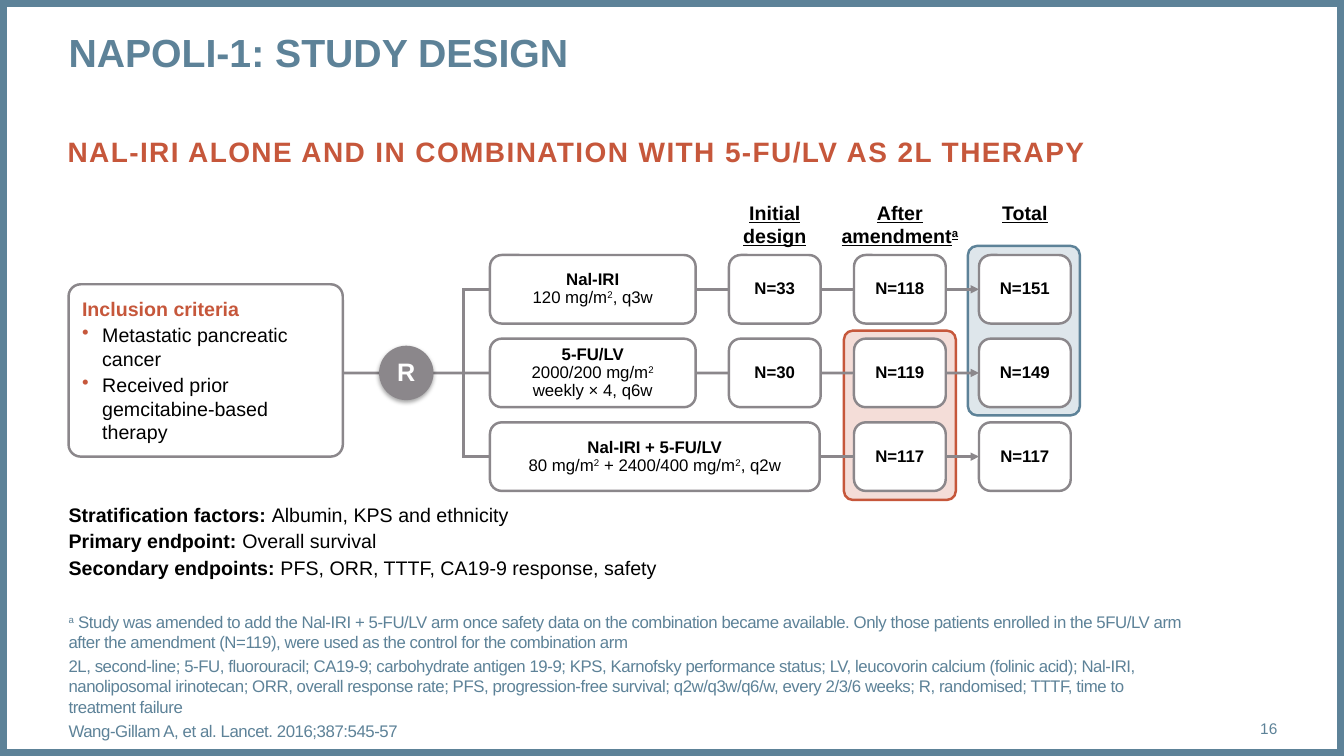
from dataclasses import dataclass

import pptx
import pptx.dml.color
import pptx.enum.shapes
import pptx.enum.text
import pptx.oxml
import pptx.oxml.ns
import pptx.util
from lxml import etree

Inches = pptx.util.Inches
Pt = pptx.util.Pt
qn = pptx.oxml.ns.qn
SHAPE = pptx.enum.shapes.MSO_SHAPE
ALIGN = pptx.enum.text.PP_ALIGN
ANCHOR = pptx.enum.text.MSO_ANCHOR


@dataclass(frozen=True)
class Theme:
    font: str = "Arial"
    slate: str = "5D8298"
    slate_tint: str = "DEE6EB"
    rust: str = "C6573B"
    rust_tint: str = "F4DDD8"
    grey: str = "8B878B"
    black: str = "000000"
    white: str = "FFFFFF"
    title: int = 28
    subtitle: int = 20
    badge: int = 18
    body: int = 14
    small: int = 12
    number: int = 11
    outline: float = 1.75
    connector: int = 2


THEME = Theme()

# Span styles: b bold, u underlined, s superscript
ROW_TOP, ROW_STEP, BOX_HEIGHT = 2.53, 0.83, 0.68
COUNT_LEFT, COUNT_STEP, COUNT_WIDTH = 7.23, 1.24, 0.91
ARM_LEFT, BRANCH_X = 4.86, 4.6
BOX_MARGINS = (0.04, 0.05, 0.04, 0.05)

HEADERS = [
    [("Initial\ndesign", "bu")],
    [("After\namendment", "bu"), ("a", "bus")],
    [("Total", "bu")],
]
# Each arm: spans, box width, line start, counts from the last columns
ARMS = [
    ([("Nal-IRI\n", "b"), ("120 mg/m", ""), ("2", "s"), (", q3w", "")],
     2.04, BRANCH_X, ["N=33", "N=118", "N=151"]),
    ([("5-FU/LV\n", "b"), ("2000/200 mg/m", ""), ("2\n", "s"), ("weekly × 4, q6w", "")],
     2.04, 2.95, ["N=30", "N=119", "N=149"]),
    ([("Nal-IRI + 5-FU/LV\n", "b"), ("80 mg/m", ""), ("2", "s"),
      (" + 2400/400 mg/m", ""), ("2", "s"), (", q2w", "")],
     3.27, BRANCH_X, ["N=117", "N=117"]),
]
ENDPOINTS = [
    [("Stratification factors: ", "b"), ("Albumin, KPS and ethnicity", "")],
    [("Primary endpoint: ", "b"), ("Overall survival", "")],
    [("Secondary endpoints: ", "b"), ("PFS, ORR, TTTF, CA19-9 response, safety", "")],
]
FOOTNOTES = [
    [("a", "s"), (" Study was amended to add the Nal-IRI + 5-FU/LV arm once safety data on the "
                  "combination became available. Only those patients enrolled in the 5FU/LV arm "
                  "after the amendment (N=119), were used as the control for the combination arm", "")],
    [("2L, second-line; 5-FU, fluorouracil; CA19-9; carbohydrate antigen 19-9; KPS, Karnofsky "
      "performance status; LV, leucovorin calcium (folinic acid); Nal‑IRI, nanoliposomal "
      "irinotecan; ORR, overall response rate; PFS, progression-free survival; q2w/q3w/q6/w, "
      "every 2/3/6 weeks; R, randomised; TTTF, time to treatment failure", "")],
    [("Wang-Gillam A, et al. Lancet. 2016;387:545-57", "")],
]


def rgb(value):
    return pptx.dml.color.RGBColor.from_string(value)


def apply(target, values):
    for name, value in values.items():
        setattr(target, name, value)


def add_span(para, text, style, size, color, spacing):
    for index, line in enumerate(text.split("\n")):
        if index:
            para.add_line_break()
            etree.SubElement(para._p[-1], qn("a:rPr"), sz=str(size * 100))
        if not line:
            continue
        span = para.add_run()
        span.text = line
        apply(span.font, {"name": THEME.font, "size": Pt(size), "bold": "b" in style,
                          "underline": "u" in style})
        span.font.color.rgb = rgb(color)
        properties = span._r.get_or_add_rPr()
        if "s" in style:
            properties.set("baseline", "30000")
        if spacing:
            properties.set("spc", str(round(spacing * 100)))


def write(shape, paras, size, color, align=ALIGN.LEFT, anchor=ANCHOR.TOP,
          margins=(0, 0, 0, 0), before=0, after=0, line=1.0, spacing=0):
    """Fill a shape with paragraphs, each a list of (text, style) spans."""
    frame = shape.text_frame
    apply(frame, {"word_wrap": True, "auto_size": pptx.enum.text.MSO_AUTO_SIZE.NONE,
                  "vertical_anchor": anchor})
    sides = ("margin_left", "margin_top", "margin_right", "margin_bottom")
    apply(frame, {side: Inches(value) for side, value in zip(sides, margins)})
    for index, spans in enumerate(paras):
        para = frame.add_paragraph() if index else frame.paragraphs[0]
        apply(para, {"alignment": align, "line_spacing": line, "space_after": Pt(after),
                     "space_before": Pt(before if index else 0)})
        for text, style in spans:
            add_span(para, text, style, size, color, spacing)
    return frame


def set_bullet(para, indent, color=None):
    """Hang a coloured bullet, or clear the inherited one if no colour is given."""
    properties = para._p.get_or_add_pPr()
    properties.set("marL", str(Inches(indent)))
    properties.set("indent", str(-Inches(indent)))
    if color:
        holder = etree.SubElement(properties, qn("a:buClr"))
        etree.SubElement(holder, qn("a:srgbClr"), val=color)
        etree.SubElement(properties, qn("a:buChar"), char="•")
    else:
        etree.SubElement(properties, qn("a:buNone"))


def place(shape, left, top, width, height):
    apply(shape, {"left": Inches(left), "top": Inches(top),
                  "width": Inches(width), "height": Inches(height)})


def add_panel(page, kind, area, fill=None, line=None, weight=THEME.outline, corner=None):
    shape = page.shapes.add_shape(kind, *map(Inches, area))
    shape.shadow.inherit = False
    if fill:
        shape.fill.solid()
        shape.fill.fore_color.rgb = rgb(fill)
    else:
        shape.fill.background()
    if line:
        shape.line.color.rgb = rgb(line)
        shape.line.width = Pt(weight)
    else:
        shape.line.fill.background()
    if corner is not None:
        shape.adjustments[0] = corner
    return shape


def add_box(page, left, top, width, spans):
    box = add_panel(page, SHAPE.ROUNDED_RECTANGLE, (left, top, width, BOX_HEIGHT),
                    THEME.white, THEME.grey, corner=0.17)
    write(box, [spans], THEME.small, THEME.black, ALIGN.CENTER, ANCHOR.MIDDLE,
          BOX_MARGINS, line=0.9)
    return box


def add_line(page, start, end, target=None):
    """Draw a line; with a target box it becomes an arrow joined to its left side."""
    line = page.shapes.add_connector(pptx.enum.shapes.MSO_CONNECTOR.STRAIGHT,
                                     *map(Inches, start + end))
    line.line.color.rgb = rgb(THEME.grey)
    line.line.width = Pt(THEME.connector)
    if target is not None:
        line.end_connect(target, 1)
        etree.SubElement(line.line._get_or_add_ln(), qn("a:tailEnd"), type="triangle")
    etree.SubElement(line._element.spPr, qn("a:effectLst"))


def add_text(page, area, paras, size, color, **layout):
    write(page.shapes.add_textbox(*map(Inches, area)), paras, size, color, **layout)


def add_arm(page, row, spans, width, line_start, counts):
    top = ROW_TOP + row * ROW_STEP
    middle = top + BOX_HEIGHT / 2
    first = len(HEADERS) - len(counts)
    lefts = [COUNT_LEFT + COUNT_STEP * (first + index) for index in range(len(counts))]
    total = add_box(page, lefts[-1], top, COUNT_WIDTH, [(counts[-1], "b")])
    add_line(page, (line_start, middle), (lefts[-1], middle), total)
    add_box(page, ARM_LEFT, top, width, spans)
    for left, count in zip(lefts[:-1], counts):
        add_box(page, left, top, COUNT_WIDTH, [(count, "b")])


def add_inclusion_criteria(page):
    box = add_panel(page, SHAPE.ROUNDED_RECTANGLE, (0.68, 2.82, 2.72, 1.71),
                    THEME.white, THEME.grey, corner=0.07)
    criteria = ["Metastatic pancreatic cancer", "Received prior gemcitabine-based therapy"]
    frame = write(box, [[("Inclusion criteria", "b")]] + [[(text, "")] for text in criteria],
                  THEME.body, THEME.black, anchor=ANCHOR.MIDDLE,
                  margins=(0.1, 0.05, 0.1, 0.05), after=2)
    frame.paragraphs[0].runs[0].font.color.rgb = rgb(THEME.rust)
    for para in frame.paragraphs[1:]:
        set_bullet(para, 0.2, THEME.rust)


def add_randomisation_badge(page):
    badge = add_panel(page, SHAPE.OVAL, (3.76, 3.43, 0.54, 0.54), THEME.grey)
    write(badge, [[("R", "b")]], THEME.badge, THEME.white, ALIGN.CENTER, ANCHOR.MIDDLE,
          (0, 0.05, 0, 0.05), line=0.9)
    effects = badge._element.spPr.find(qn("a:effectLst"))
    shadow = etree.SubElement(effects, qn("a:outerShdw"), blurRad=str(Pt(3.1)),
                              dist=str(Pt(1.8)), dir="5400000", rotWithShape="0")
    shade = etree.SubElement(shadow, qn("a:srgbClr"), val=THEME.black)
    etree.SubElement(shade, qn("a:alpha"), val="35000")


def fill_placeholders(page):
    title, subtitle, notes = page.placeholders
    place(title, 0.68, 0.28, 11.99, 0.94)
    write(title, [[("NAPOLI-1: STUDY DESIGN", "b")]], THEME.title, THEME.slate)
    place(subtitle, 0.67, 1.33, 12, 0.77)
    write(subtitle, [[("NAL-IRI ALONE AND IN COMBINATION WITH 5-FU/LV AS 2L THERAPY", "b")]],
          THEME.subtitle, THEME.rust, spacing=1)
    place(notes, 0.68, 6.95, 11.13, 0.4)
    write(notes, FOOTNOTES, THEME.small, THEME.slate, anchor=ANCHOR.BOTTOM,
          before=3, spacing=-0.3)
    for holder in (subtitle, notes):
        for para in holder.text_frame.paragraphs:
            set_bullet(para, 0)


def main():
    deck = pptx.Presentation()
    apply(deck, {"slide_width": Inches(13.33), "slide_height": Inches(7.5)})
    page = deck.slides.add_slide(deck.slide_layouts.get_by_name("Two Content"))
    add_panel(page, SHAPE.RECTANGLE, (0, 0, 13.33, 7.5), line=THEME.slate, weight=10)
    fill_placeholders(page)
    for left, top, fill, line in ((9.6, 2.44, THEME.slate_tint, THEME.slate),
                                  (8.37, 3.28, THEME.rust_tint, THEME.rust)):
        add_panel(page, SHAPE.ROUNDED_RECTANGLE, (left, top, 1.11, 1.68), fill, line, corner=0.08)
    add_line(page, (BRANCH_X, 2.86), (BRANCH_X, 4.54))
    for row, arm in enumerate(ARMS):
        add_arm(page, row, *arm)
    for column, spans in enumerate(HEADERS):
        left = COUNT_LEFT + column * COUNT_STEP - 0.15
        add_text(page, (left, 1.99, COUNT_WIDTH + 0.3, 0.47), [spans], THEME.body, THEME.black,
                 align=ALIGN.CENTER)
    add_inclusion_criteria(page)
    add_randomisation_badge(page)
    add_text(page, (0.68, 4.99, 6.85, 0.76), ENDPOINTS, THEME.body, THEME.black, after=2)
    add_text(page, (11.81, 7.03, 0.86, 0.4), [[("16", "")]], THEME.number, THEME.slate,
             align=ALIGN.RIGHT, anchor=ANCHOR.MIDDLE)
    deck.save("out.pptx")


if __name__ == "__main__":
    main()
